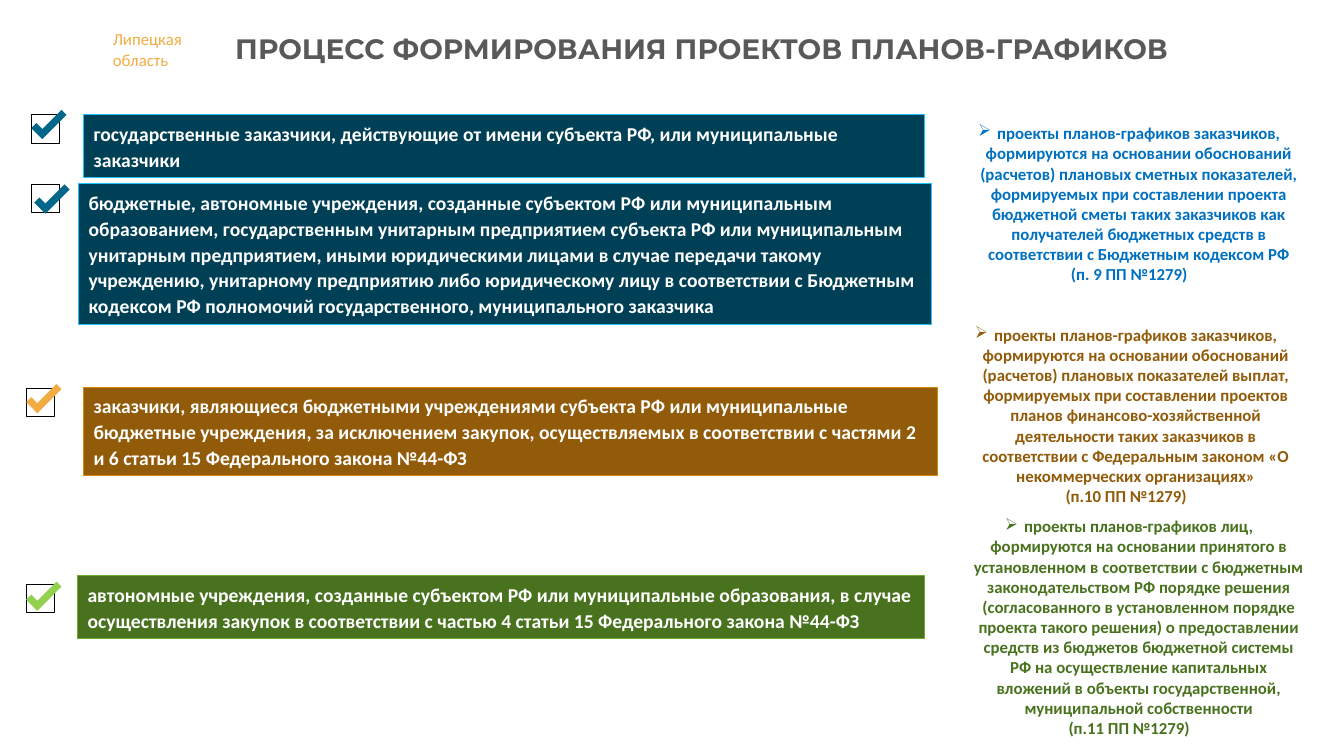
from typing import NamedTuple

from lxml import etree
from pptx import Presentation
from pptx.dml.color import RGBColor
from pptx.enum.shapes import MSO_SHAPE
from pptx.enum.text import MSO_ANCHOR, MSO_AUTO_SIZE, PP_ALIGN
from pptx.oxml.ns import qn
from pptx.util import Inches, Pt

RECTANGLE = MSO_SHAPE.RECTANGLE
MIDDLE = MSO_ANCHOR.MIDDLE
TOP = MSO_ANCHOR.TOP
FIT_SHAPE = MSO_AUTO_SIZE.SHAPE_TO_FIT_TEXT
CENTER = PP_ALIGN.CENTER
LEFT = PP_ALIGN.LEFT

BODY_FONT = "Calibri"
BLUE, BROWN, GREEN = "004056", "915B0A", "49721E"
CHECKBOX_SIZE = 0.28
TICK_POINTS = [(0.05, 0.13), (0.11, 0.19), (0.3, 0), (0.35, 0.05), (0.11, 0.29), (0, 0.18)]
BULLET_INDENT = Inches(0.19)


class Point(NamedTuple):
    left: float
    top: float


class Box(NamedTuple):
    left: float
    top: float
    width: float
    height: float


class Customer(NamedTuple):
    box: Box
    checkbox: Point
    tick: Point
    fill: str
    outline: str
    tick_color: str
    text: str


class Basis(NamedTuple):
    box: Box
    color: str
    text: str
    clause: str


CUSTOMERS = [
    Customer(Box(0.83, 1.14, 8.34, 0.62), Point(0.31, 1.14), Point(0.31, 1.09),
             BLUE, "20C5FF", "00668A",
             "государственные заказчики, действующие от имени субъекта РФ, "
             "или муниципальные заказчики"),
    Customer(Box(0.78, 1.82, 8.46, 1.4), Point(0.31, 1.83), Point(0.34, 1.83),
             BLUE, "20C5FF", "00668A",
             "бюджетные, автономные учреждения, созданные субъектом РФ или муниципальным "
             "образованием, государственным унитарным предприятием субъекта РФ или "
             "муниципальным унитарным предприятием, иными юридическими лицами в случае "
             "передачи такому учреждению, унитарному предприятию либо юридическому лицу "
             "в соответствии с Бюджетным кодексом РФ полномочий государственного, "
             "муниципального заказчика"),
    Customer(Box(0.83, 3.84, 8.47, 0.88), Point(0.26, 3.85), Point(0.26, 3.81),
             BROWN, "D9880F", "F2AC44",
             "заказчики, являющиеся бюджетными учреждениями субъекта РФ или муниципальные "
             "бюджетные учреждения, за исключением закупок, осуществляемых в соответствии "
             "с частями 2 и 6 статьи 15 Федерального закона №44-ФЗ"),
    Customer(Box(0.77, 5.71, 8.4, 0.62), Point(0.26, 5.8), Point(0.26, 5.77),
             GREEN, "6EAA2E", "92D050",
             "автономные учреждения, созданные субъектом РФ или муниципальные образования, "
             "в случае осуществления закупок в соответствии с частью 4 статьи 15 "
             "Федерального закона №44-ФЗ"),
]

BASES = [
    Basis(Box(9.36, 1.17, 3.68, 1.72), "0070C0",
          "проекты планов-графиков заказчиков, формируются на основании обоснований "
          "(расчетов) плановых сметных показателей, формируемых при составлении проекта "
          "бюджетной сметы таких заказчиков как получателей бюджетных средств "
          "в соответствии с Бюджетным кодексом РФ",
          "(п. 9 ПП №1279)"),
    Basis(Box(9.33, 3.17, 3.68, 1.92), BROWN,
          "проекты планов-графиков заказчиков, формируются на основании обоснований "
          "(расчетов) плановых показателей выплат, формируемых при составлении проектов "
          "планов финансово-хозяйственной деятельности таких заказчиков в соответствии "
          "с Федеральным законом «О некоммерческих организациях»",
          "(п.10 ПП №1279)"),
    Basis(Box(9.36, 5.07, 3.68, 2.32), GREEN,
          "проекты планов-графиков лиц, формируются на основании принятого "
          "в установленном в соответствии с бюджетным законодательством РФ порядке решения "
          "(согласованного в установленном порядке проекта такого решения) "
          "о предоставлении средств из бюджетов бюджетной системы РФ на осуществление "
          "капитальных вложений в объекты государственной, муниципальной собственности",
          "(п.11 ПП №1279)"),
]


def rgb(color: str) -> RGBColor:
    return RGBColor.from_string(color)


def style_paragraph(paragraph, size: float, color: str, bold: bool = True,
                    align=LEFT, font_name: str = BODY_FONT) -> None:
    paragraph.alignment = align
    font = paragraph.font
    font.name, font.size, font.bold = font_name, Pt(size), bold
    font.color.rgb = rgb(color)


def add_bullet(paragraph) -> None:
    properties = paragraph._p.get_or_add_pPr()
    properties.set("marL", str(BULLET_INDENT))
    properties.set("indent", str(-BULLET_INDENT))
    etree.SubElement(properties, qn("a:buChar")).set("char", "➢")


def add_text(slide, box: Box, lines: list[str], size: float, color: str, bold: bool = True,
             align=LEFT, font_name: str = BODY_FONT, anchor=TOP, bulleted: bool = False) -> None:
    """Add a text box with one paragraph per line; a bullet goes on the first only."""
    frame = slide.shapes.add_textbox(*map(Inches, box)).text_frame
    frame.word_wrap = True
    frame.vertical_anchor = anchor
    frame.text = "\n".join(lines)
    if bulleted:
        add_bullet(frame.paragraphs[0])
    for paragraph in frame.paragraphs:
        style_paragraph(paragraph, size, color, bold, align, font_name)


def add_rectangle(slide, box: Box, outline: str, fill: str | None = None):
    rectangle = slide.shapes.add_shape(RECTANGLE, *map(Inches, box))
    rectangle.shadow.inherit = False
    if fill:
        rectangle.fill.solid()
        rectangle.fill.fore_color.rgb = rgb(fill)
    else:
        rectangle.fill.background()
    rectangle.line.color.rgb = rgb(outline)
    rectangle.line.width = Pt(0.75)
    return rectangle


def add_tick(slide, corner: Point, color: str) -> None:
    points = [(Inches(corner.left + x), Inches(corner.top + y)) for x, y in TICK_POINTS]
    builder = slide.shapes.build_freeform(*points[0])
    builder.add_line_segments(points[1:], close=True)
    tick = builder.convert_to_shape()
    tick.shadow.inherit = False
    tick.fill.solid()
    tick.fill.fore_color.rgb = rgb(color)
    tick.line.fill.background()


def add_customer(slide, customer: Customer) -> None:
    """Add the filled description of a customer with its ticked checkbox."""
    panel = add_rectangle(slide, customer.box, customer.outline, customer.fill)
    frame = panel.text_frame
    frame.word_wrap = True
    frame.auto_size = FIT_SHAPE
    frame.vertical_anchor = TOP
    frame.text = customer.text
    paragraph = frame.paragraphs[0]
    paragraph.line_spacing = 1.1
    style_paragraph(paragraph, 14, "FFFFFF")
    add_rectangle(slide, Box(*customer.checkbox, CHECKBOX_SIZE, CHECKBOX_SIZE), "000000")
    add_tick(slide, customer.tick, customer.tick_color)


def main() -> None:
    presentation = Presentation()
    presentation.slide_width = Inches(13.33)
    presentation.slide_height = Inches(7.5)
    slide = presentation.slides.add_slide(presentation.slide_layouts[6])

    add_text(slide, Box(1.02, 0.24, 0.91, 0.5), ["Липецкая", "область"], 12, "F2AC44", bold=False)
    add_text(slide, Box(1.96, -0.02, 10, 1), ["ПРОЦЕСС ФОРМИРОВАНИЯ ПРОЕКТОВ ПЛАНОВ-ГРАФИКОВ"],
             20, "595959", align=CENTER, font_name="Montserrat", anchor=MIDDLE)
    for customer in CUSTOMERS:
        add_customer(slide, customer)
    for basis in BASES:
        add_text(slide, basis.box, [basis.text, basis.clause], 12, basis.color,
                 align=CENTER, bulleted=True)
    presentation.save("out.pptx")


if __name__ == "__main__":
    main()
